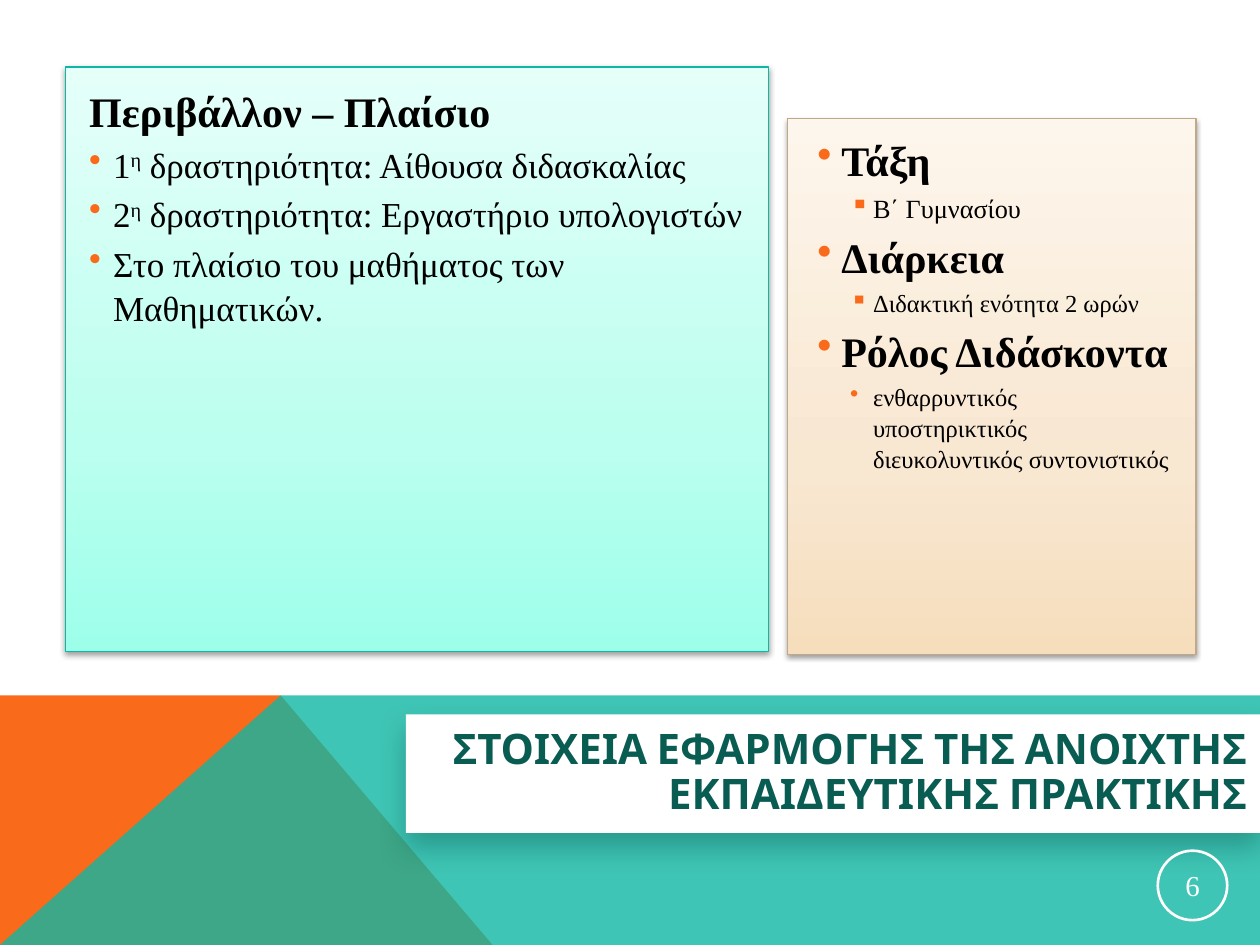
from copy import deepcopy

from lxml import etree
from pptx import Presentation
from pptx.dml.color import RGBColor
from pptx.enum.shapes import MSO_SHAPE
from pptx.enum.text import MSO_ANCHOR, MSO_AUTO_SIZE, PP_ALIGN
from pptx.oxml.ns import qn
from pptx.util import Cm, Pt

RECT, OVAL = MSO_SHAPE.RECTANGLE, MSO_SHAPE.OVAL
MIDDLE, NO_FIT = MSO_ANCHOR.MIDDLE, MSO_AUTO_SIZE.NONE
LEFT, CENTER, RIGHT = PP_ALIGN.LEFT, PP_ALIGN.CENTER, PP_ALIGN.RIGHT

COLORS = {
    "orange": "F96A1B", "teal": "10B7A3", "dark teal": "085C52",
    "white": "FFFFFF", "black": "000000",
    "mint line": "0CB7A3", "sand line": "BFA989",
}
SERIF, SANS = "Times New Roman", "Cabin"
WIDTH, HEIGHT = 25.4, 19.05

# Content
TITLE = "ΣΤΟΙΧΕΙΑ ΕΦΑΡΜΟΓΗΣ ΤΗΣ ΑΝΟΙΧΤΗΣ ΕΚΠΑΙΔΕΥΤΙΚΗΣ ΠΡΑΚΤΙΚΗΣ"
PAGE = "6"

# Paragraph: style, size, runs; a run starting with ^ is superscript
SETTING = [
    ("heading", 24, ["Περιβάλλον – Πλαίσιο"]),
    ("item", 20, ["1", "^η", " δραστηριότητα: Αίθουσα διδασκαλίας"]),
    ("item", 20, ["2", "^η", " δραστηριότητα: Εργαστήριο υπολογιστών"]),
    ("item", 20, ["Στο πλαίσιο του μαθήματος των Μαθηματικών."]),
]
DETAILS = [
    ("topic", 24, ["Τάξη"]),
    ("square", 15, ["Β΄ Γυμνασίου"]),
    ("topic", 24, ["Διάρκεια"]),
    ("square", 14, ["Διδακτική ενότητα 2 ωρών"]),
    ("topic", 24, ["Ρόλος Διδάσκοντα"]),
    ("dot", 14, ["ενθαρρυντικός υποστηρικτικός διευκολυντικός συντονιστικός"]),
]
# Style: bold, bullet, left margin and hanging indent in cm
STYLES = {
    "heading": (True, None, 0, 0),
    "item": (False, "•", 0.48, 0.48),
    "topic": (True, "•", 0.48, 0.48),
    "square": (False, "▪", 1.12, 0.46),
    "dot": (False, "•", 1.12, 0.46),
}
# Panel: box, text box, gradient from bottom to top, line, paragraphs
PANELS = [
    ((15.88, 2.39, 8.23, 10.8), (16.23, 2.54, 7.7, 10.31),
     ["F6DEBD", "F8E7D1", "FDF6EC"], "sand line", DETAILS),
    ((1.32, 1.35, 14.17, 11.79), (1.55, 1.55, 13.77, 11.48),
     ["9DFFEA", "BAFFEF", "E5FFF9"], "mint line", SETTING),
]
GRADIENT_STOPS = [0, 0.35, 1]

# Backdrop: colour, opacity in percent, corners
BAND_TOP, PEAK = 14.02, 5.66
BACKDROP = [
    ("orange", 100,
     [(0, HEIGHT), (0, BAND_TOP), (PEAK, BAND_TOP), (9.93, HEIGHT)]),
    ("teal", 80,
     [(0, HEIGHT), (PEAK, BAND_TOP), (WIDTH, BAND_TOP), (WIDTH, HEIGHT)]),
]


def rgb(name):
    return RGBColor.from_string(COLORS.get(name, name))


def lengths(values):
    return [Cm(value) for value in values]


def add_color(parent, name, opacity):
    color = etree.SubElement(parent, qn("a:srgbClr"), val=COLORS[name])
    etree.SubElement(color, qn("a:alpha"), val=str(opacity * 1000))


def paint(shape, fill=None, line=None, weight=0.75):
    shape.shadow.inherit = False
    if fill:
        shape.fill.solid()
        shape.fill.fore_color.rgb = rgb(fill)
    else:
        shape.fill.background()
    if line:
        shape.line.color.rgb = rgb(line)
        shape.line.width = Pt(weight)
    else:
        shape.line.fill.background()


def cast_shadow(shape, color, opacity, blur, distance):
    effects = shape.element.spPr.find(qn("a:effectLst"))
    shadow = etree.SubElement(
        effects, qn("a:outerShdw"), blurRad=str(Pt(blur)),
        dist=str(Pt(distance)), dir="5400000", algn="t", rotWithShape="0")
    add_color(shadow, color, opacity)


def shade(shape, colors):
    shape.fill.gradient()
    shape.fill.gradient_angle = 90
    stops = shape.element.spPr.find(qn("a:gradFill")).find(qn("a:gsLst"))
    stops.append(deepcopy(stops[-1]))
    for stop, color, place in zip(shape.fill.gradient_stops, colors, GRADIENT_STOPS):
        stop.color.rgb = rgb(color)
        stop.position = place


def write(paragraph, runs, size, font=SERIF, color="black", bold=False,
          align=LEFT, spacing=1.0, before=0, bullet=None, margin=0, hang=0):
    paragraph.alignment = align
    paragraph.line_spacing = spacing
    paragraph.space_before = Pt(before)
    if bullet:
        properties = paragraph._p.get_or_add_pPr()
        properties.set("marL", str(Cm(margin)))
        properties.set("indent", str(-Cm(hang)))
        bullet_color = etree.SubElement(properties, qn("a:buClr"))
        etree.SubElement(bullet_color, qn("a:srgbClr"), val=COLORS["orange"])
        etree.SubElement(properties, qn("a:buChar"), char=bullet)
    for text in runs:
        run = paragraph.add_run()
        run.text = text.removeprefix("^")
        run.font.size, run.font.name, run.font.bold = Pt(size), font, bold
        run.font.color.rgb = rgb(color)
        if text.startswith("^"):
            run.font._element.set("baseline", "30000")


prs = Presentation()
prs.slide_width, prs.slide_height = Cm(WIDTH), Cm(HEIGHT)
slide = prs.slides.add_slide(prs.slide_layouts[5])
shapes = slide.shapes

# Coloured band at the foot
for color, opacity, corners in BACKDROP:
    start, *others = [lengths(corner) for corner in corners]
    builder = shapes.build_freeform(*start)
    builder.add_line_segments(others, close=True)
    facet = builder.convert_to_shape()
    paint(facet, color)
    if opacity < 100:
        solid = facet.element.spPr.find(qn("a:solidFill"))
        solid.clear()
        add_color(solid, color, opacity)

# Panels
for box, text_box, gradient, line, paragraphs in PANELS:
    panel = shapes.add_shape(RECT, *lengths(box))
    paint(panel, line=line)
    shade(panel, gradient)
    cast_shadow(panel, "black", 38, 3.1, 1.6)
    body = shapes.add_textbox(*lengths(text_box)).text_frame
    body.word_wrap = True
    for index, (style, size, runs) in enumerate(paragraphs):
        bold, bullet, margin, hang = STYLES[style]
        paragraph = body.add_paragraph() if index else body.paragraphs[0]
        write(paragraph, runs, size, bold=bold, bullet=bullet, margin=margin,
              hang=hang, spacing=1.05, before=3 if index else 0)

# Title, brought in front of the band
title = shapes.title
title.left, title.top, title.width, title.height = lengths((8.18, 14.4, 17.22, 2.39))
paint(title, "white")
cast_shadow(title, "dark teal", 40, 16, 8)
title.text_frame.auto_size = NO_FIT
title.text_frame.vertical_anchor = MIDDLE
write(title.text_frame.paragraphs[0], [TITLE], 24, font=SANS,
      color="dark teal", bold=True, align=RIGHT, spacing=0.9)
title.element.getparent().append(title.element)

# Page number
badge = shapes.add_shape(OVAL, *lengths((23.34, 17.15, 1.4, 1.4)))
paint(badge, line="white", weight=1.5)
number = badge.text_frame
number.vertical_anchor = MIDDLE
number.margin_left = number.margin_right = Cm(0.03)
number.margin_top = number.margin_bottom = Cm(0.03)
write(number.paragraphs[0], [PAGE], 16.5, color="white", align=CENTER)

prs.save("out.pptx")
